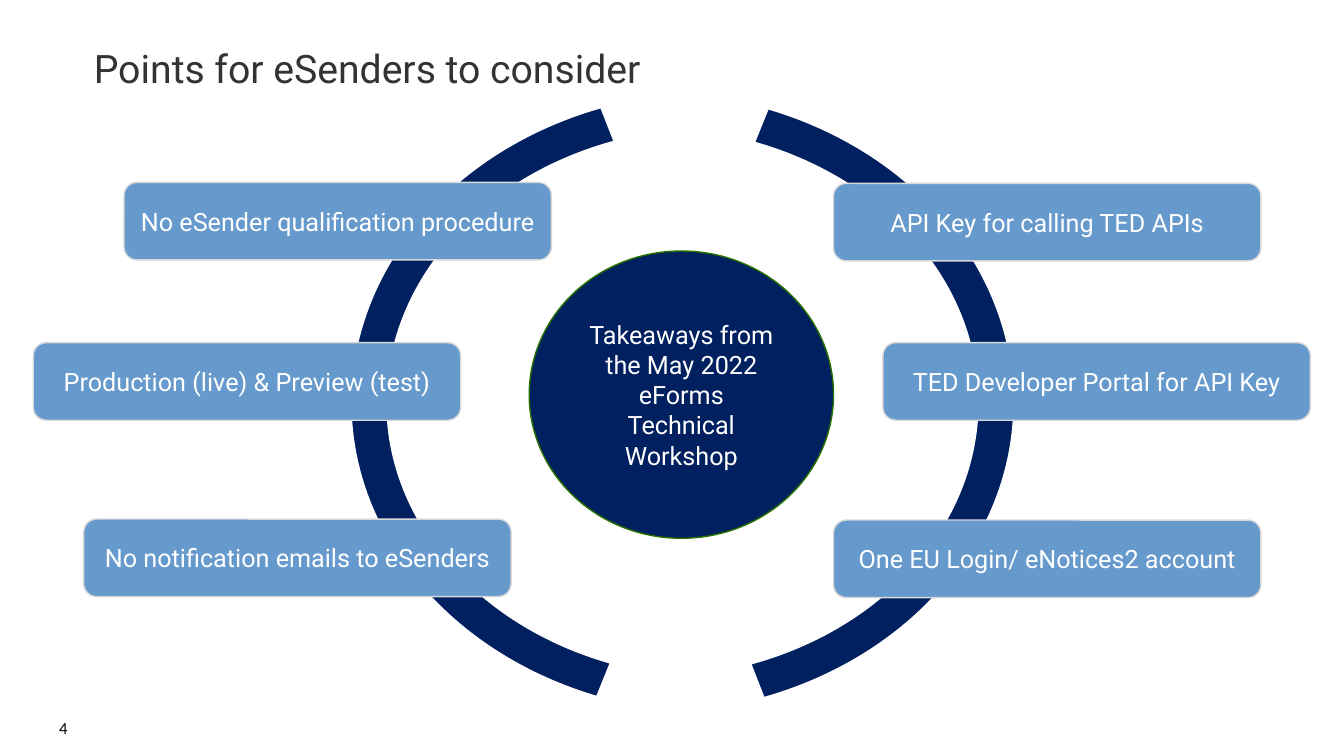
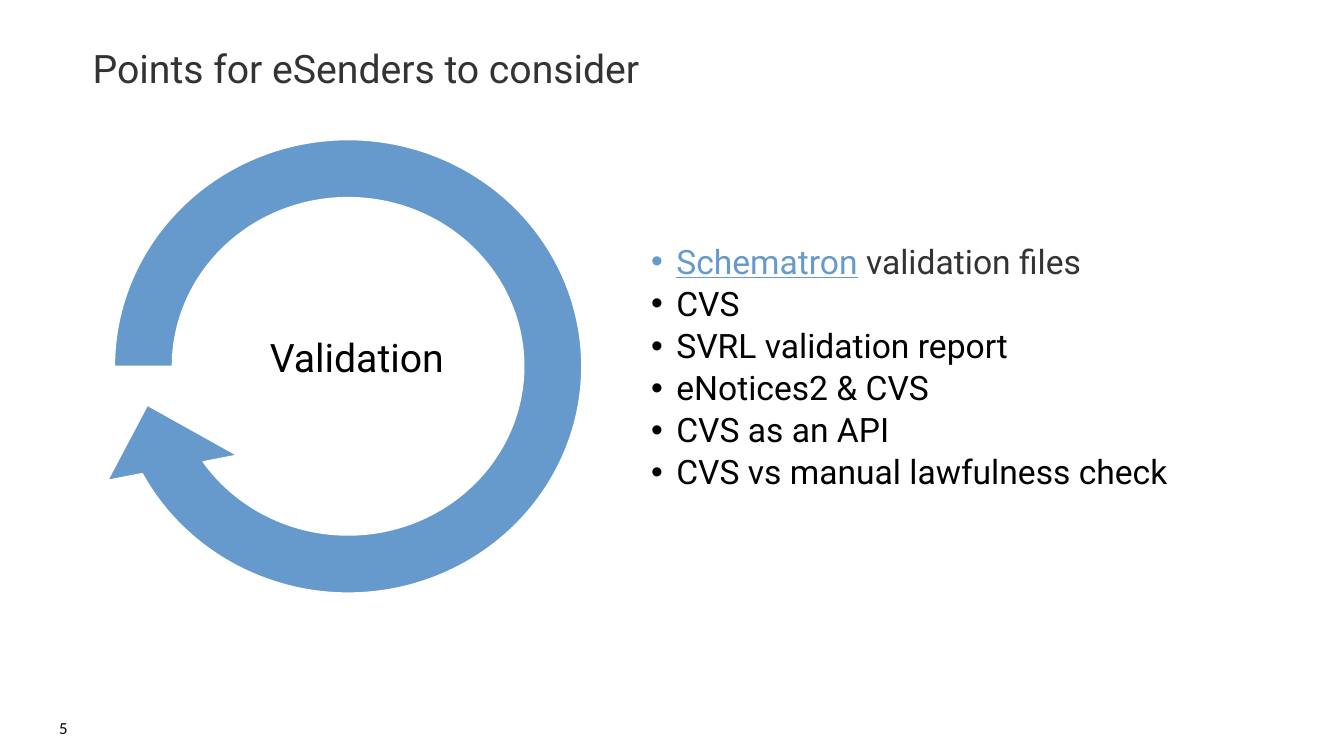
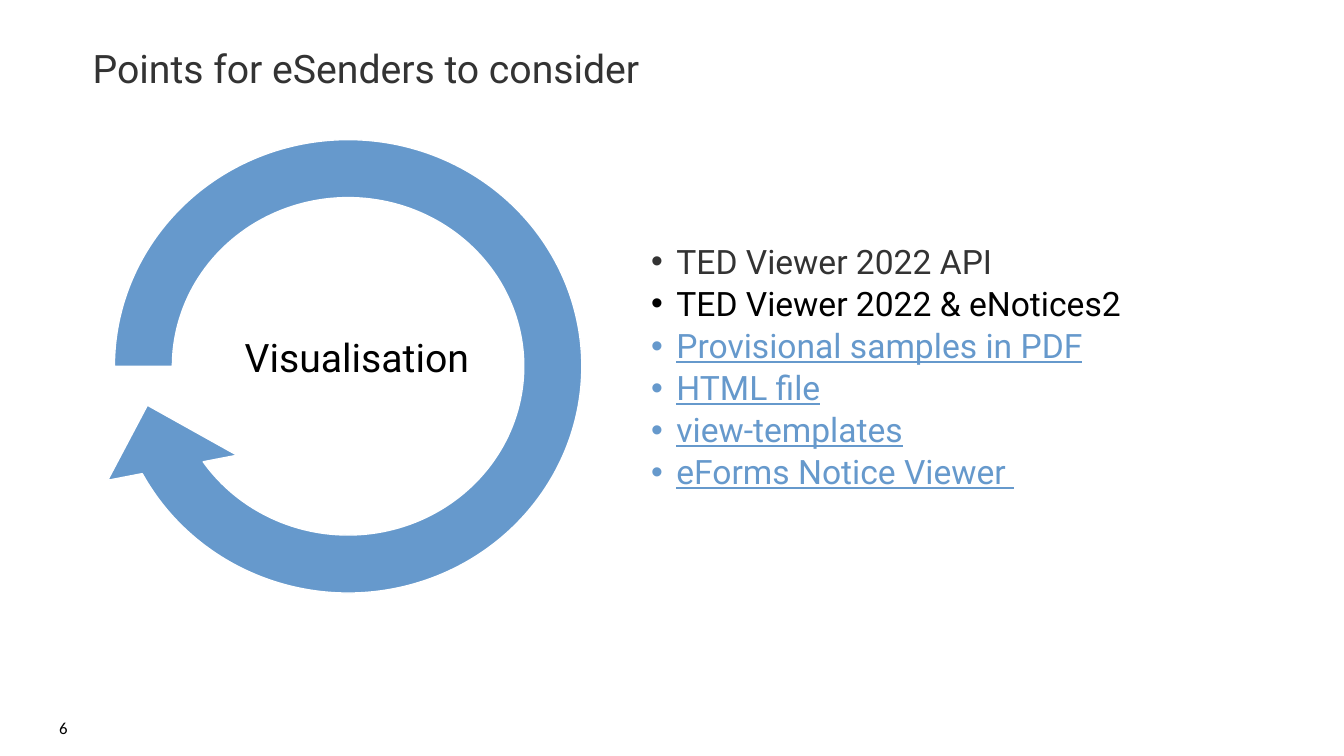
"""Build three slides of points for eSenders to consider."""
from dataclasses import dataclass

from lxml.etree import SubElement
from pptx import Presentation
from pptx.dml.color import RGBColor
from pptx.enum.shapes import MSO_SHAPE
from pptx.enum.text import MSO_ANCHOR, MSO_AUTO_SIZE, PP_ALIGN
from pptx.oxml.ns import qn
from pptx.presentation import Presentation as Deck
from pptx.shapes.autoshape import Shape
from pptx.slide import Slide
from pptx.text.text import TextFrame
from pptx.util import Pt


@dataclass(frozen=True)
class Theme:
    """Colours, fonts and type sizes of the deck."""
    navy: str = "002060"
    blue: str = "6699CC"
    green: str = "267100"
    pale: str = "D9D9D9"
    white: str = "FFFFFF"
    dark: str = "333333"
    black: str = "000000"
    font: str = "Roboto"
    number_font: str = "Calibri"
    title: int = 28
    bullet: int = 24
    label: int = 18
    number: int = 12


@dataclass(frozen=True)
class Box:
    """A rectangle in points."""
    left: float
    top: float
    width: float
    height: float


@dataclass(frozen=True)
class Span:
    """A piece of text in one colour."""
    text: str
    color: str
    underline: bool = False


@dataclass(frozen=True)
class Side:
    """An arc and the labels that sit on it."""
    arc_left: float
    rotation: float
    labels: tuple[tuple[str, float, float], ...]


@dataclass(frozen=True)
class Topic:
    """A ring label with its bullet list."""
    name: str
    bullets: tuple[tuple[Span, ...], ...]


T = Theme()
TITLE = "Points for eSenders to consider"
FIRST_NUMBER = 4
HUB = "Takeaways from the May 2022 eForms Technical Workshop"
ARC_ADJ = (175.278, 41.191, 0.058)
RING_ADJ = (0.11, 11.423, 90, 108, 0.125)

LEFT = Side(250.6, 180, (
    ("No eSender qualification procedure", 88.6, 130.3),
    ("Production (live) & Preview (test)", 23.8, 244.8),
    ("No notification emails to eSenders", 59.8, 370.8),
))
RIGHT = Side(202.3, 0, (
    ("API Key for calling TED APIs", 595.4, 131),
    ("TED Developer Portal for API Key", 630.7, 244.8),
    ("One EU Login/ eNotices2 account", 595.4, 371.5),
))


def plain(text: str) -> tuple[Span, ...]:
    """Return a black bullet."""
    return (Span(text, T.black),)


def link(text: str) -> tuple[Span, ...]:
    """Return an underlined blue bullet."""
    return (Span(text, T.blue, True),)


TOPICS = (
    Topic("Validation", (
        link("Schematron") + (Span(" validation files", T.dark),),
        plain("CVS"),
        plain("SVRL validation report"),
        plain("eNotices2 & CVS"),
        plain("CVS as an API"),
        plain("CVS vs manual lawfulness check"),
    )),
    Topic("Visualisation", (
        (Span("TED Viewer 2022 API", T.dark),),
        plain("TED Viewer 2022 & eNotices2"),
        link("Provisional samples in PDF"),
        link("HTML file"),
        link("view-templates"),
        link("eForms Notice Viewer "),
    )),
)


def place(sp: Shape, box: Box) -> None:
    """Move and size a shape."""
    sp.left, sp.top = Pt(box.left), Pt(box.top)
    sp.width, sp.height = Pt(box.width), Pt(box.height)


def set_frame(tf: TextFrame, anchor: MSO_ANCHOR, inset: tuple[float, float, float, float]) -> None:
    """Set wrapping, anchor and left, top, right and bottom insets."""
    tf.word_wrap = True
    tf.auto_size = MSO_AUTO_SIZE.NONE
    tf.vertical_anchor = anchor
    tf.margin_left, tf.margin_top, tf.margin_right, tf.margin_bottom = map(Pt, inset)


def write(tf: TextFrame, spans: tuple[Span, ...], size: float, align: PP_ALIGN,
          spacing: float = 1, font: str = T.font, index: int = 0, after: float = 0) -> None:
    """Write one paragraph run by run."""
    p = tf.add_paragraph() if index else tf.paragraphs[0]
    p.alignment = align
    p.line_spacing = spacing
    p.space_before, p.space_after = Pt(0), Pt(after)
    for span in spans:
        r = p.add_run()
        r.text = span.text
        r.font.name, r.font.size = font, Pt(size)
        r.font.color.rgb = RGBColor.from_string(span.color)
        r.font.underline = span.underline


def add_text(s: Slide, box: Box, text: str, size: float, align: PP_ALIGN,
             spacing: float = 1, font: str = T.font, inset: float = 1.44) -> None:
    """Add a vertically centred black text box."""
    sp = s.shapes.add_textbox(Pt(box.left), Pt(box.top), Pt(box.width), Pt(box.height))
    set_frame(sp.text_frame, MSO_ANCHOR.MIDDLE, (inset,) * 4)
    write(sp.text_frame, plain(text), size, align, spacing, font)


def add_figure(s: Slide, kind: MSO_SHAPE, box: Box, fill: str, line: str,
               adj: tuple[float, ...] = (), text: str = "", inset: float = 7.2) -> Shape:
    """Add a filled preset shape with an optional white label."""
    sp = s.shapes.add_shape(kind, Pt(box.left), Pt(box.top), Pt(box.width), Pt(box.height))
    sp.shadow.inherit = False
    sp.fill.solid()
    sp.fill.fore_color.rgb = RGBColor.from_string(fill)
    sp.line.color.rgb = RGBColor.from_string(line)
    sp.line.width = Pt(1)
    for i, value in enumerate(adj):
        sp.adjustments[i] = value
    if text:
        set_frame(sp.text_frame, MSO_ANCHOR.MIDDLE, (inset, 3.6, inset, 3.6))
        write(sp.text_frame, (Span(text, T.white),), T.label, PP_ALIGN.CENTER)
    return sp


def new_slide(prs: Deck, layout: int, title_left: float) -> Slide:
    """Add a slide with the shared title and number."""
    s = prs.slides.add_slide(prs.slide_layouts[layout])
    title = s.shapes.title
    place(title, Box(title_left, 10, 826.6, 55.5))
    set_frame(title.text_frame, MSO_ANCHOR.BOTTOM, (0, 3.6, 0, 0))
    write(title.text_frame, (Span(TITLE, T.dark),), T.title, PP_ALIGN.LEFT, 0.9)
    number = str(FIRST_NUMBER + len(prs.slides) - 1)
    add_text(s, Box(0, 505.4, 55.4, 28.8), number, T.number, PP_ALIGN.RIGHT,
             font=T.number_font, inset=7.2)
    return s


def add_side(s: Slide, side: Side) -> None:
    """Draw an arc with its labels."""
    arc = add_figure(s, MSO_SHAPE.BLOCK_ARC, Box(side.arc_left, 65.5, 522, 444.2),
                     T.navy, T.white, ARC_ADJ)
    arc.rotation = side.rotation
    for text, left, top in side.labels:
        add_figure(s, MSO_SHAPE.ROUNDED_RECTANGLE, Box(left, top, 305.3, 55.4),
                   T.blue, T.pale, text=text)


def add_bullets(sp: Shape, bullets: tuple[tuple[Span, ...], ...]) -> None:
    """Fill the body placeholder with a bullet list."""
    place(sp, Box(463.7, 149.8, 373.7, 227))
    tf = sp.text_frame
    set_frame(tf, MSO_ANCHOR.MIDDLE, (1.44,) * 4)
    for i, spans in enumerate(bullets):
        write(tf, spans, T.bullet, PP_ALIGN.LEFT, 0.9, index=i, after=4.2)
        pPr = tf.paragraphs[i]._p.get_or_add_pPr()
        pPr.set("marL", str(Pt(18)))
        pPr.set("indent", str(-Pt(18)))
        SubElement(pPr, qn("a:buChar")).set("char", "•")


def add_overview(prs: Deck) -> None:
    """Add the slide with the hub and its two sides."""
    s = new_slide(prs, 5, 67)
    add_side(s, LEFT)
    add_figure(s, MSO_SHAPE.OVAL, Box(378, 179.3, 217.4, 205.2), T.navy, T.green,
               text=HUB, inset=9)
    add_side(s, RIGHT)


def add_topic(prs: Deck, topic: Topic) -> None:
    """Add a slide with a ring and a bullet list."""
    s = new_slide(prs, 1, 66.2)
    add_figure(s, MSO_SHAPE.CIRCULAR_ARROW, Box(55.4, 73.4, 386.6, 376.6),
               T.blue, T.white, RING_ADJ)
    add_bullets(s.placeholders[1], topic.bullets)
    add_text(s, Box(168.5, 210.2, 172.8, 93.6), topic.name, T.title, PP_ALIGN.CENTER, 0.9)


def main() -> None:
    """Build and save the deck."""
    prs = Presentation()
    prs.slide_width, prs.slide_height = Pt(960), Pt(540)
    add_overview(prs)
    for topic in TOPICS:
        add_topic(prs, topic)
    prs.save("out.pptx")


if __name__ == "__main__":
    main()
